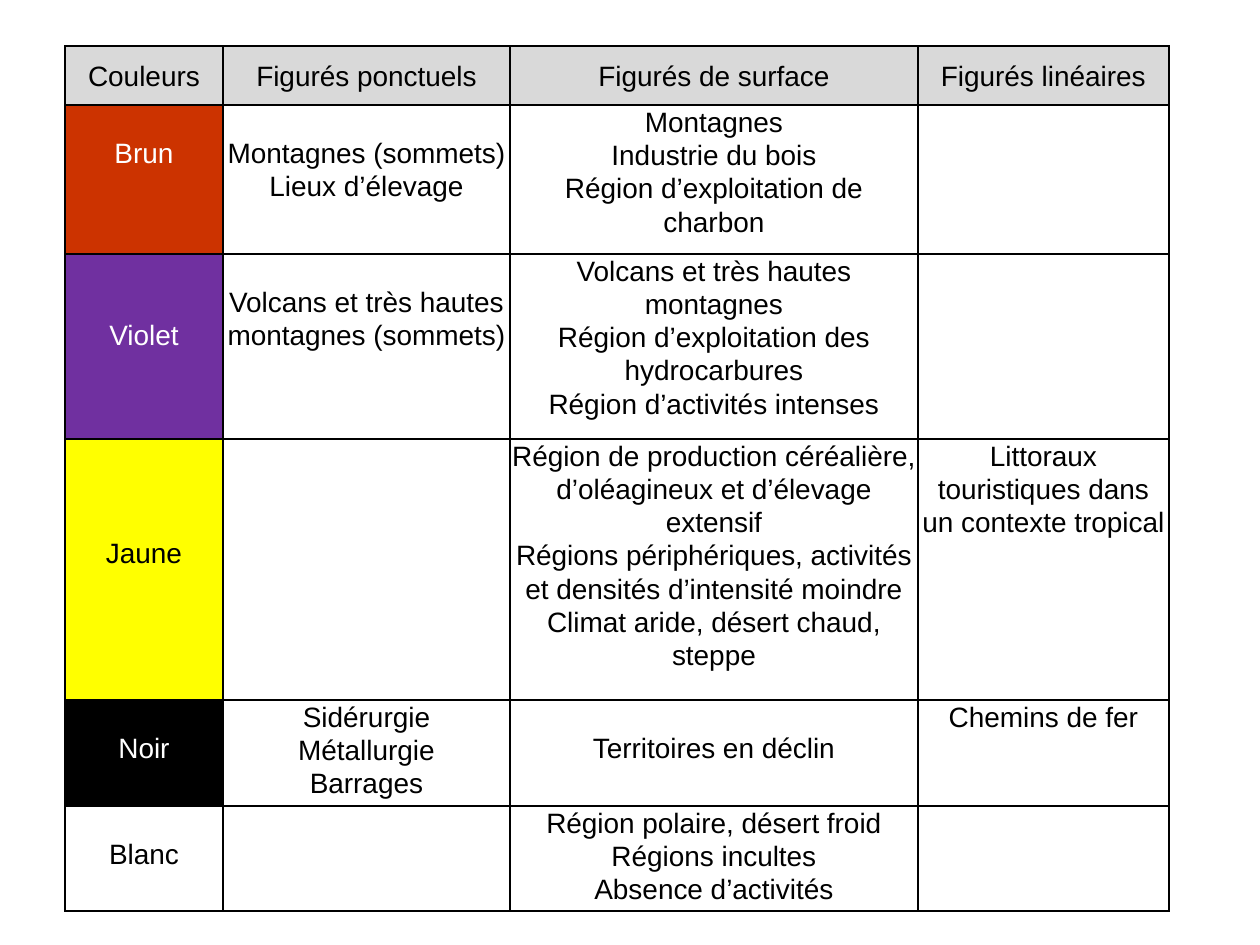
from lxml import etree
from pptx import Presentation
from pptx.dml.color import RGBColor
from pptx.enum.text import PP_ALIGN
from pptx.oxml.ns import qn
from pptx.util import Pt

CENTER = PP_ALIGN.CENTER
BLACK = RGBColor(0x00, 0x00, 0x00)
WHITE = RGBColor(0xFF, 0xFF, 0xFF)
GREY = RGBColor(0xD9, 0xD9, 0xD9)
BROWN = RGBColor(0xCC, 0x33, 0x00)
PURPLE = RGBColor(0x70, 0x30, 0xA0)
YELLOW = RGBColor(0xFF, 0xFF, 0x00)

PX = 914400 / 126
LEFT, TOP = 65, 46
COLUMN_WIDTHS = [158, 287, 408, 251]
ROW_HEIGHTS = [59, 149, 185, 261, 106, 105]
SIDE_MARGIN = 2
FIRST_LINE, NEXT_LINE = 31, 33

HEADINGS = ["Couleurs", "Figurés ponctuels", "Figurés de surface", "Figurés linéaires"]
COLOURS = [
    ("Brun", BROWN, WHITE),
    ("Violet", PURPLE, WHITE),
    ("Jaune", YELLOW, BLACK),
    ("Noir", BLACK, WHITE),
    ("Blanc", None, BLACK),
]
USES = [
    ("Montagnes (sommets)\nLieux d’élevage",
     "Montagnes\nIndustrie du bois\nRégion d’exploitation de charbon",
     ""),
    ("Volcans et très hautes montagnes (sommets)",
     "Volcans et très hautes montagnes\nRégion d’exploitation des hydrocarbures\n"
     "Région d’activités intenses",
     ""),
    ("",
     "Région de production céréalière, d’oléagineux et d’élevage extensif\n"
     "Régions périphériques, activités et densités d’intensité moindre\n"
     "Climat aride, désert chaud, steppe",
     "Littoraux touristiques dans un contexte tropical"),
    ("Sidérurgie\nMétallurgie\nBarrages", "Territoires en déclin", "Chemins de fer"),
    ("", "Région polaire, désert froid\nRégions incultes\nAbsence d’activités", ""),
]
LINES_ABOVE = [
    (1, 1, 0, 0),
    (2, 1, 0, 0),
    (3, 0, 0, 0),
    (1, 0, 1, 0),
    (1, 0, 0, 0),
]


def px(length):
    return round(length * PX)


def add_borders(cell):
    properties = cell._tc.get_or_add_tcPr()
    for side in ("a:lnL", "a:lnR", "a:lnT", "a:lnB"):
        border = etree.SubElement(properties, qn(side), w=str(Pt(1)))
        paint = etree.SubElement(border, qn("a:solidFill"))
        etree.SubElement(paint, qn("a:srgbClr"), val=str(BLACK))


def fill_cell(cell, text, background=None, ink=BLACK, spacing=1.07, lines_above=0):
    add_borders(cell)
    if background is None:
        cell.fill.background()
    else:
        cell.fill.solid()
        cell.fill.fore_color.rgb = background
    cell.margin_left = cell.margin_right = px(SIDE_MARGIN)
    cell.margin_top = px(FIRST_LINE + NEXT_LINE * (lines_above - 1)) if lines_above else 0
    cell.margin_bottom = 0
    cell.text_frame.text = text
    for paragraph in cell.text_frame.paragraphs:
        paragraph.alignment = CENTER
        paragraph.line_spacing = spacing
        for run in paragraph.runs:
            run.font.name = "Arial"
            run.font.size = Pt(16)
            run.font.color.rgb = ink


def main():
    prs = Presentation()
    prs.slide_width, prs.slide_height = px(1260), px(945)
    slide = prs.slides.add_slide(prs.slide_layouts[6])
    legend = slide.shapes.add_table(
        len(ROW_HEIGHTS), len(COLUMN_WIDTHS), px(LEFT), px(TOP),
        px(sum(COLUMN_WIDTHS)), px(sum(ROW_HEIGHTS))).table
    legend.first_row = False
    legend.horz_banding = False
    for column, width in zip(legend.columns, COLUMN_WIDTHS):
        column.width = px(width)
    for row, height in zip(legend.rows, ROW_HEIGHTS):
        row.height = px(height)

    for col, heading in enumerate(HEADINGS):
        fill_cell(legend.cell(0, col), heading, GREY, spacing=1.5)
    for row, (colour, uses, above) in enumerate(zip(COLOURS, USES, LINES_ABOVE), 1):
        name, background, ink = colour
        fill_cell(legend.cell(row, 0), name, background, ink, lines_above=above[0])
        for col, use in enumerate(uses, 1):
            fill_cell(legend.cell(row, col), use, lines_above=above[col])

    prs.save("out.pptx")


if __name__ == "__main__":
    main()
